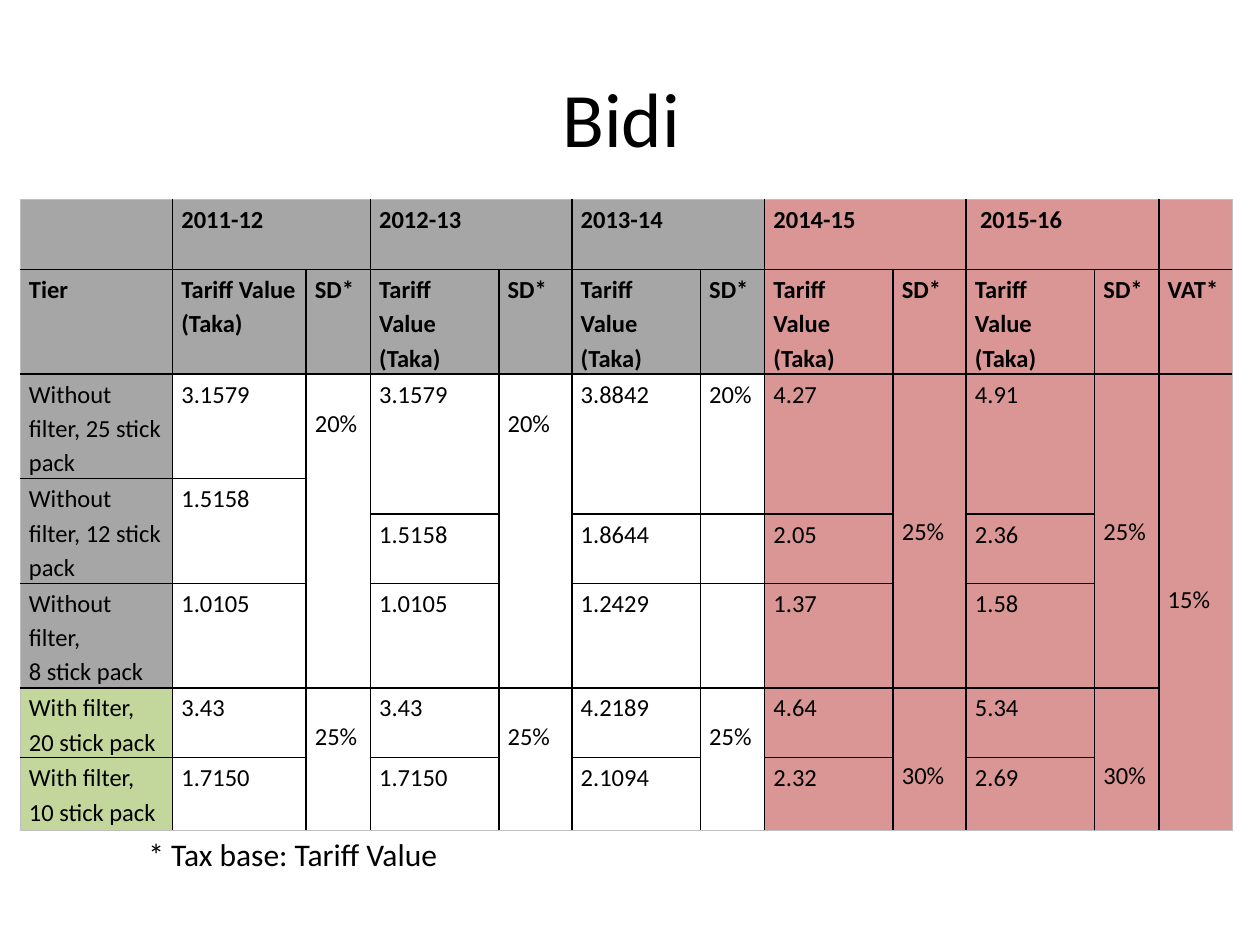
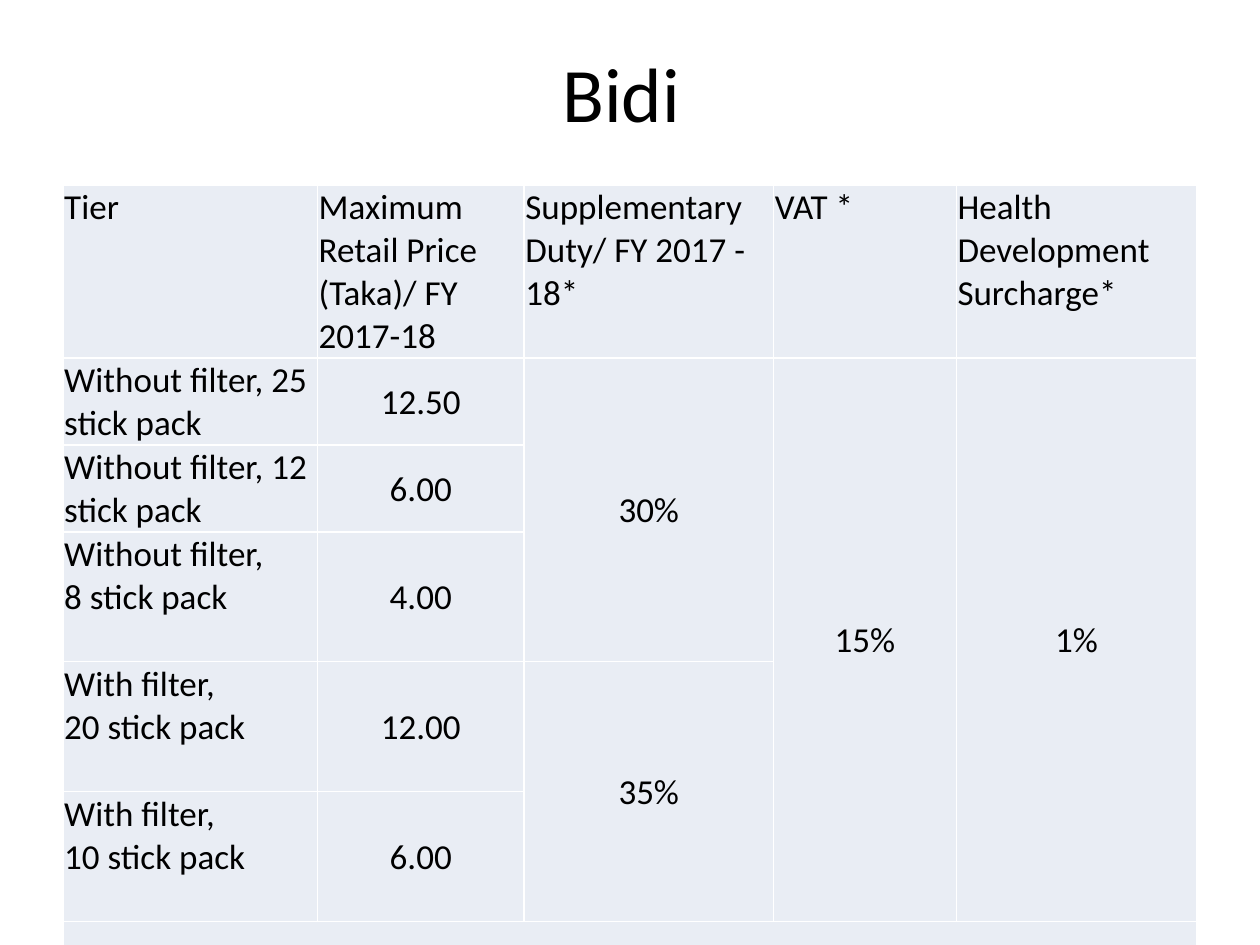
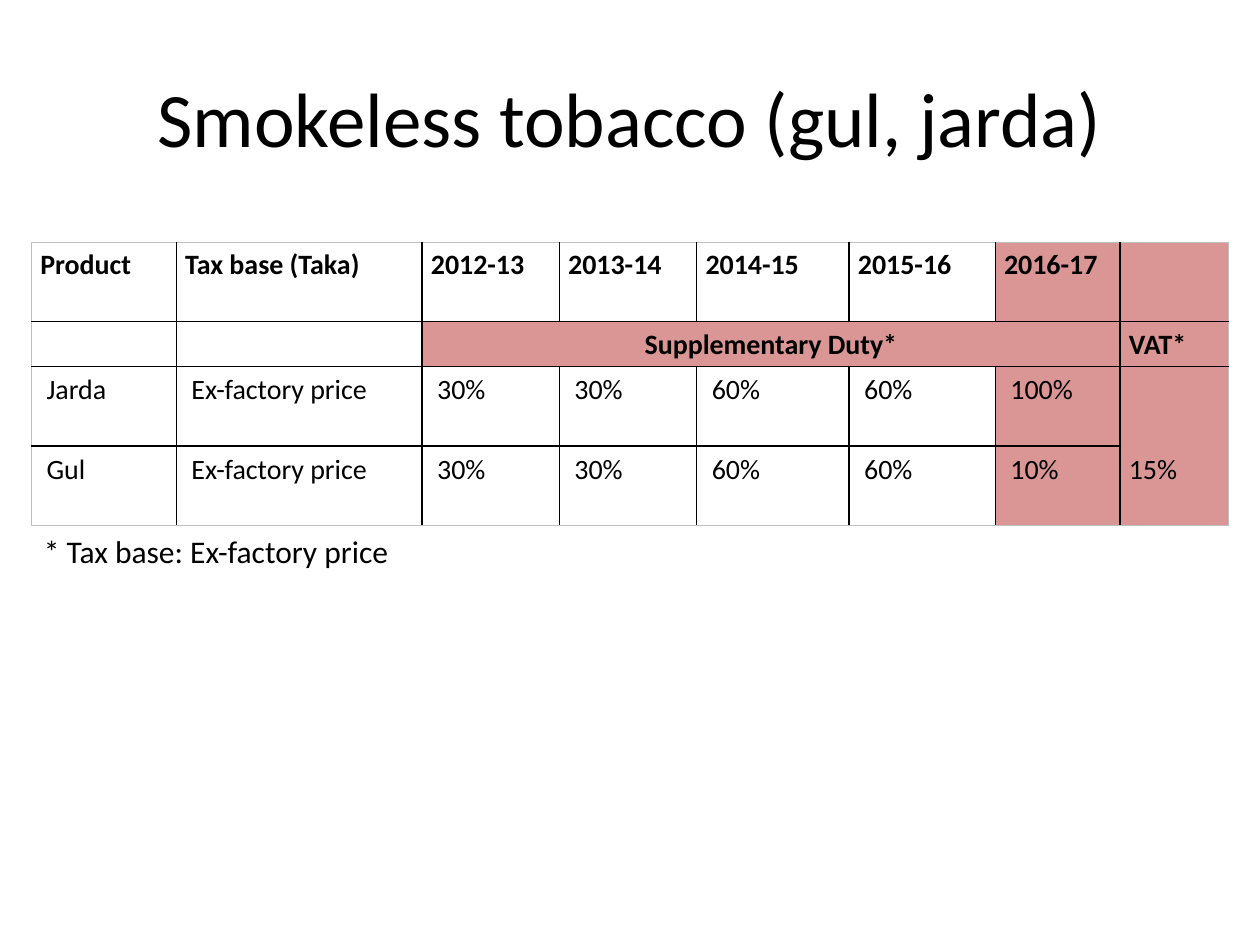
from dataclasses import dataclass

from lxml import etree
from pptx import Presentation
from pptx import util as u
from pptx.dml.color import RGBColor
from pptx.enum import text
from pptx.oxml import ns

LEFT, UP = "<", "^"  # grid marks: cell joins its left or upper neighbour


@dataclass(frozen=True)
class Theme:
    font: str = "Calibri"
    ink: str = "000000"
    white: str = "FFFFFF"
    edge: str = "BFBFBF"
    grey: str = "A6A6A6"
    red: str = "D99694"
    green: str = "C3D69B"
    pale: str = "E9EDF4"
    title: int = 44
    note: int = 18


def assign(obj, **values):
    for name, value in values.items():
        setattr(obj, name, value)


class Deck:
    """Holds the presentation, its theme and the current slide."""

    def __init__(self, theme):
        self.theme = theme
        self.prs = Presentation()
        assign(self.prs, slide_width=u.Inches(10), slide_height=u.Inches(7.5))
        self.s = None

    def new_slide(self, title, height=1.25):
        self.s = self.prs.slides.add_slide(self.prs.slide_layouts[5])
        sp = self.s.shapes.title
        self.place(sp, 0.5, 0.3, 9, height)
        sp.text_frame.text = title
        sp.text_frame.vertical_anchor = text.MSO_ANCHOR.MIDDLE
        self.format(sp.text_frame, self.theme.title, align=text.PP_ALIGN.CENTER)

    def place(self, sp, *box):
        assign(sp, **dict(zip(("left", "top", "width", "height"), map(u.Inches, box))))

    def format(self, tf, size, bold=False, align=text.PP_ALIGN.LEFT, spacing=1.0):
        for p in tf.paragraphs:
            assign(p, alignment=align, line_spacing=spacing)
            for r in p.runs:
                assign(r.font, name=self.theme.font, size=u.Pt(size), bold=bold)
                r.font.color.rgb = RGBColor.from_string(self.theme.ink)

    def note(self, words, *box):
        tf = self.s.shapes.add_textbox(*map(u.Inches, box)).text_frame
        assign(tf, word_wrap=True, text=words)
        self.format(tf, self.theme.note)

    def table(self, left, top, widths, heights, grid, style, inner, outer):
        """style(row, col) gives the look of a cell as a dict."""
        frame = self.s.shapes.add_table(
            len(heights), len(widths), *map(u.Inches, (left, top, sum(widths), sum(heights))))
        tbl = frame.table
        assign(tbl, first_row=False, horz_banding=False)
        for col, width in zip(tbl.columns, widths):
            col.width = u.Inches(width)
        for row, height in zip(tbl.rows, heights):
            row.height = u.Inches(height)
        self.merge(tbl, grid)
        for i, line in enumerate(grid):
            for j, words in enumerate(line):
                cell = tbl.cell(i, j)
                if cell.is_spanned:
                    assign(cell, margin_top=0, margin_bottom=0)
                    continue
                self.cell(cell, words, **style(i, j))
                rows = cell.span_height if cell.is_merge_origin else 1
                cols = cell.span_width if cell.is_merge_origin else 1
                at_edge = (j == 0, j + cols == len(widths), i == 0, i + rows == len(heights))
                self.borders(cell, [outer if end else inner for end in at_edge])

    def merge(self, tbl, grid):
        for i, line in enumerate(grid):
            for j, words in enumerate(line):
                if words in (LEFT, UP):
                    continue
                last_row, last_col = i, j
                while last_row + 1 < len(grid) and grid[last_row + 1][j] == UP:
                    last_row += 1
                while last_col + 1 < len(line) and line[last_col + 1] == LEFT:
                    last_col += 1
                if (last_row, last_col) != (i, j):
                    tbl.cell(i, j).merge(tbl.cell(last_row, last_col))

    def cell(self, cell, words, fill, size, side=0.07, indent=0, down=0,
             anchor=text.MSO_ANCHOR.TOP, **look):
        assign(cell, text=words, vertical_anchor=anchor,
               margin_left=u.Inches(side + indent), margin_right=u.Inches(side),
               margin_top=u.Inches(0.01 + down), margin_bottom=0)
        cell.fill.solid()
        cell.fill.fore_color.rgb = RGBColor.from_string(fill)
        self.format(cell.text_frame, size, **look)

    def borders(self, cell, lines):
        tc_pr = cell._tc.get_or_add_tcPr()
        for n, (tag, (color, points)) in enumerate(zip(("lnL", "lnR", "lnT", "lnB"), lines)):
            ln = etree.Element(ns.qn("a:" + tag), w=str(u.Pt(points)))
            fill = etree.SubElement(ln, ns.qn("a:solidFill"))
            etree.SubElement(fill, ns.qn("a:srgbClr"), val=color)
            tc_pr.insert(n, ln)


def bidi_history(deck):
    t = deck.theme
    deck.new_slide("Bidi ")
    tariff = "Tariff Value (Taka)"
    grid = [
        ["", "2011-12", LEFT, "2012-13", LEFT, "2013-14", LEFT, "2014-15", LEFT,
         "2015-16", LEFT, ""],
        ["Tier"] + [tariff, "SD*"] * 5 + ["VAT*"],
        ["Without filter, 25 stick pack", "3.1579", "20%", "3.1579", "20%", "3.8842", "20%",
         "4.27", "25%", "4.91", "25%", "15%"],
        ["Without filter, 12 stick pack", "1.5158"] + [UP] * 10,
        [UP, UP, UP, "1.5158", UP, "1.8644", "", "2.05", UP, "2.36", UP, UP],
        ["Without filter,\n8 stick pack", "1.0105", UP, "1.0105", UP, "1.2429", "",
         "1.37", UP, "1.58", UP, UP],
        ["With filter,\n20 stick pack", "3.43", "25%", "3.43", "25%", "4.2189", "25%",
         "4.64", "30%", "5.34", "30%", UP],
        ["With filter,\n10 stick pack", "1.7150", UP, "1.7150", UP, "2.1094", UP,
         "2.32", UP, "2.69", UP, UP],
    ]
    # Drop of the shared rates below the top of their merged cells
    drops = {(2, 2): 0.23, (2, 4): 0.23, (2, 8): 1.09, (2, 10): 1.09, (2, 11): 1.63,
             (6, 2): 0.23, (6, 4): 0.23, (6, 6): 0.23, (6, 8): 0.54, (6, 10): 0.54}

    def style(i, j):
        if j >= 7:
            fill = t.red
        elif i < 2 or (j == 0 and i < 6):
            fill = t.grey
        else:
            fill = t.green if j == 0 else t.white
        return dict(fill=fill, size=14, bold=i < 2, spacing=1.15,
                    down=drops.get((i, j), 0), indent=0.04 if (i, j) == (0, 9) else 0)

    widths = [1.21, 1.06, 0.51, 1.02, 0.58, 1.02, 0.51, 1.02, 0.58, 1.02, 0.51, 0.58]
    heights = [0.56, 0.83, 0.83, 0.28, 0.55, 0.83, 0.55, 0.58]
    deck.table(0.16, 1.58, widths, heights, grid, style, (t.ink, 1), (t.edge, 0.5))
    deck.note("* Tax base: Tariff Value", 1.08, 6.58, 5.33, 0.42)


def bidi_current(deck):
    t = deck.theme
    deck.new_slide("Bidi ", 0.85)
    grid = [
        ["Tier", "Maximum Retail Price (Taka)/ FY 2017-18",
         "Supplementary Duty/ FY 2017 - 18*", "VAT *", "Health Development Surcharge*"],
        ["Without filter, 25 stick pack", "12.50", "30%", "15%", "1%"],
        ["Without filter, 12 stick pack", "6.00", UP, UP, UP],
        ["Without filter,\n8 stick pack", "4.00", UP, UP, UP],
        ["With filter,\n20 stick pack", "12.00", "35%", UP, UP],
        ["With filter,\n10 stick pack", "6.00", UP, UP, UP],
        [""] + [LEFT] * 4,
    ]

    def style(i, j):
        look = dict(fill=t.pale, size=20, side=0.01)
        if i and j:
            look.update(anchor=text.MSO_ANCHOR.MIDDLE, align=text.PP_ALIGN.CENTER)
        return look

    line = (t.white, 1)
    deck.table(0.5, 1.47, [2.02, 1.64, 1.98, 1.45, 1.91],
               [1.37, 0.69, 0.69, 1.03, 1.03, 1.03, 0.31], grid, style, line, line)


def smokeless(deck):
    t = deck.theme
    deck.new_slide("Smokeless tobacco (gul, jarda)")
    base = "Ex-factory price"
    grid = [
        ["Product", "Tax base (Taka)", "2012-13", "2013-14", "2014-15", "2015-16",
         "2016-17", ""],
        ["", "", "Supplementary Duty*"] + [LEFT] * 4 + ["VAT*"],
        ["Jarda", base, "30%", "30%", "60%", "60%", "100%", "15%"],
        ["Gul", base, "30%", "30%", "60%", "60%", "10%", UP],
    ]

    def style(i, j):
        duty = (i, j) == (1, 2)
        return dict(fill=t.red if j >= 6 or duty else t.white, size=16, bold=i < 2,
                    spacing=1.15, indent=0.05 if i > 1 and j < 7 else 0,
                    down=0.63 if (i, j) == (2, 7) else 0,
                    align=text.PP_ALIGN.CENTER if duty else text.PP_ALIGN.LEFT)

    deck.table(0.25, 1.92, [1.15, 1.95, 1.09, 1.09, 1.21, 1.16, 0.99, 0.86],
               [0.63, 0.36, 0.63, 0.63], grid, style, (t.ink, 1), (t.edge, 0.5))
    deck.note("* Tax base: Ex-factory price", 0.25, 4.17, 5.5, 0.4)


def main():
    deck = Deck(Theme())
    bidi_history(deck)
    bidi_current(deck)
    smokeless(deck)
    deck.prs.save("out.pptx")


if __name__ == "__main__":
    main()
